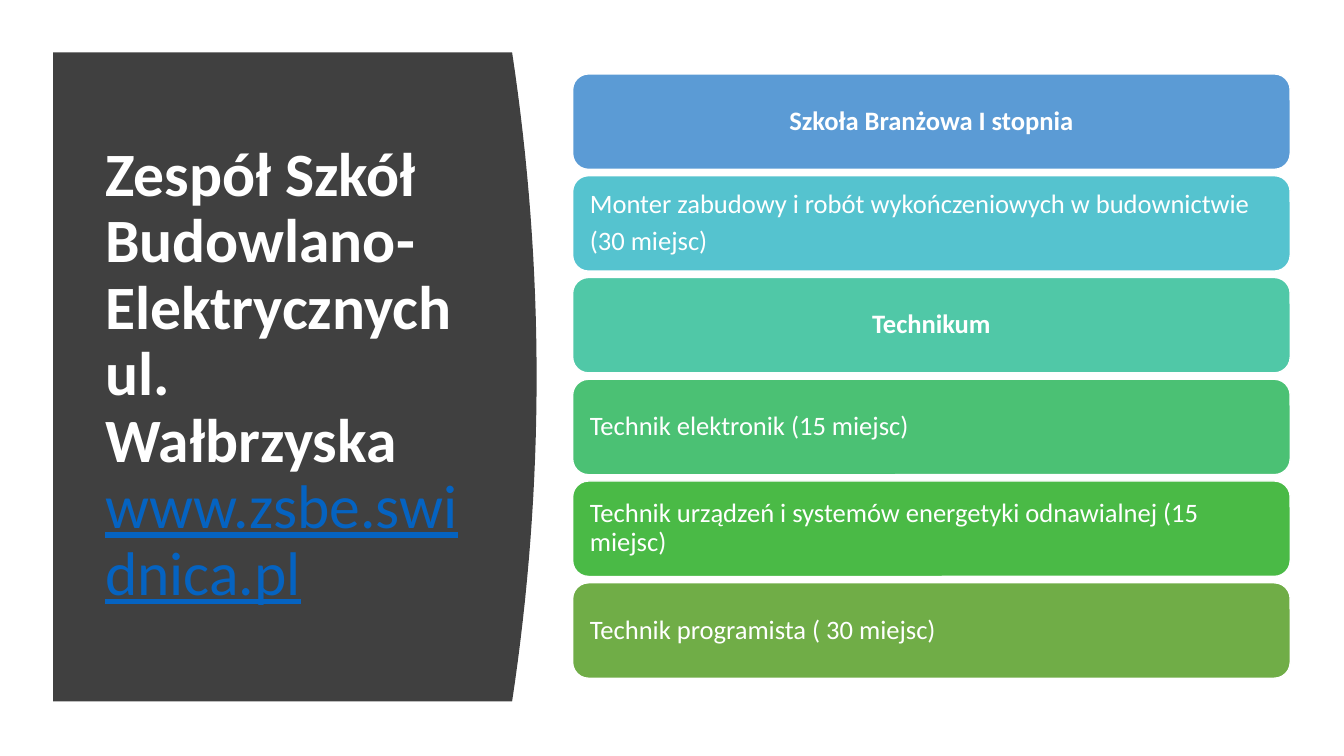
from pptx import Presentation
from pptx.dml.color import RGBColor
from pptx.enum.shapes import MSO_SHAPE as SHAPE
from pptx.enum.text import MSO_ANCHOR as ANCHOR, PP_ALIGN as ALIGN
from pptx.util import Pt


def rgb(value):
    return RGBColor.from_string(value)


class SchoolSlide:
    FONT = "Calibri"
    WHITE = "FFFFFF"
    PANEL = "404040"
    LINK = "0563C1"

    def __init__(self, prs):
        self.s = prs.slides.add_slide(prs.slide_layouts[6])

    def style(self, p, size, bold=None):
        p.line_spacing = 0.9
        p.font.name = self.FONT
        p.font.size = Pt(size)
        p.font.bold = bold

    def panel(self, left, top, right, height, bulge, steps=32):
        fb = self.s.shapes.build_freeform(Pt(left), Pt(top))
        curve = []
        for i in range(steps + 1):
            t = i / steps
            x = right + bulge * 4 * t * (1 - t)
            curve.append((Pt(x), Pt(top + height * t)))
        fb.add_line_segments(curve + [(Pt(left), Pt(top + height))])
        sp = fb.convert_to_shape()
        sp.shadow.inherit = False
        sp.fill.solid()
        sp.fill.fore_color.rgb = rgb(self.PANEL)
        sp.line.fill.background()

    def title(self, left, top, width, height, lines, link):
        tf = self.s.shapes.add_textbox(Pt(left), Pt(top), Pt(width), Pt(height)).text_frame
        tf.word_wrap = True
        tf.vertical_anchor = ANCHOR.MIDDLE
        p = tf.paragraphs[0]
        self.style(p, 44)
        for line in lines:
            r = p.add_run()
            r.text = line
            r.font.bold = True
            r.font.color.rgb = rgb(self.WHITE)
            p.add_line_break()
        r = p.add_run()
        r.text = link
        r.font.underline = True
        r.font.color.rgb = rgb(self.LINK)

    def bar(self, left, top, width, height, color, lines, heading):
        sp = self.s.shapes.add_shape(
            SHAPE.ROUNDED_RECTANGLE, Pt(left), Pt(top), Pt(width), Pt(height))
        sp.shadow.inherit = False
        sp.fill.solid()
        sp.fill.fore_color.rgb = rgb(color)
        sp.line.color.rgb = rgb(self.WHITE)
        sp.line.width = Pt(1)
        tf = sp.text_frame
        tf.word_wrap = True
        tf.vertical_anchor = ANCHOR.MIDDLE
        tf.margin_left = tf.margin_right = Pt(9)
        tf.text = "\n".join(lines)
        for p in tf.paragraphs:
            self.style(p, 19, heading)
            p.font.color.rgb = rgb(self.WHITE)
            p.alignment = ALIGN.CENTER if heading else ALIGN.LEFT
            p.space_after = Pt(6.5)


BARS = [
    ("5B9BD5", ["Szkoła Branżowa I stopnia"], True),
    ("55C3CF", ["Monter zabudowy i robót wykończeniowych w budownictwie",
                "(30 miejsc)"], False),
    ("50C8A7", ["Technikum"], True),
    ("4BC174", ["Technik elektronik (15 miejsc)"], False),
    ("4ABA46", ["Technik urządzeń i systemów energetyki odnawialnej (15 miejsc)"], False),
    ("70AD47", ["Technik programista ( 30 miejsc)"], False),
]


def main():
    prs = Presentation()
    prs.slide_width, prs.slide_height = Pt(960), Pt(540)
    slide = SchoolSlide(prs)
    slide.panel(38, 37.4, 365.8, 463.7, 17.5)
    slide.title(68, 80, 269, 377,
                ["Zespół Szkół Budowlano-Elektrycznych", "ul. Wałbrzyska"],
                "www.zsbe.swidnica.pl")
    for i, (color, lines, heading) in enumerate(BARS):
        slide.bar(409, 52.8 + 72.7 * i, 512.6, 68.2, color, lines, heading)
    prs.save("out.pptx")


if __name__ == "__main__":
    main()
